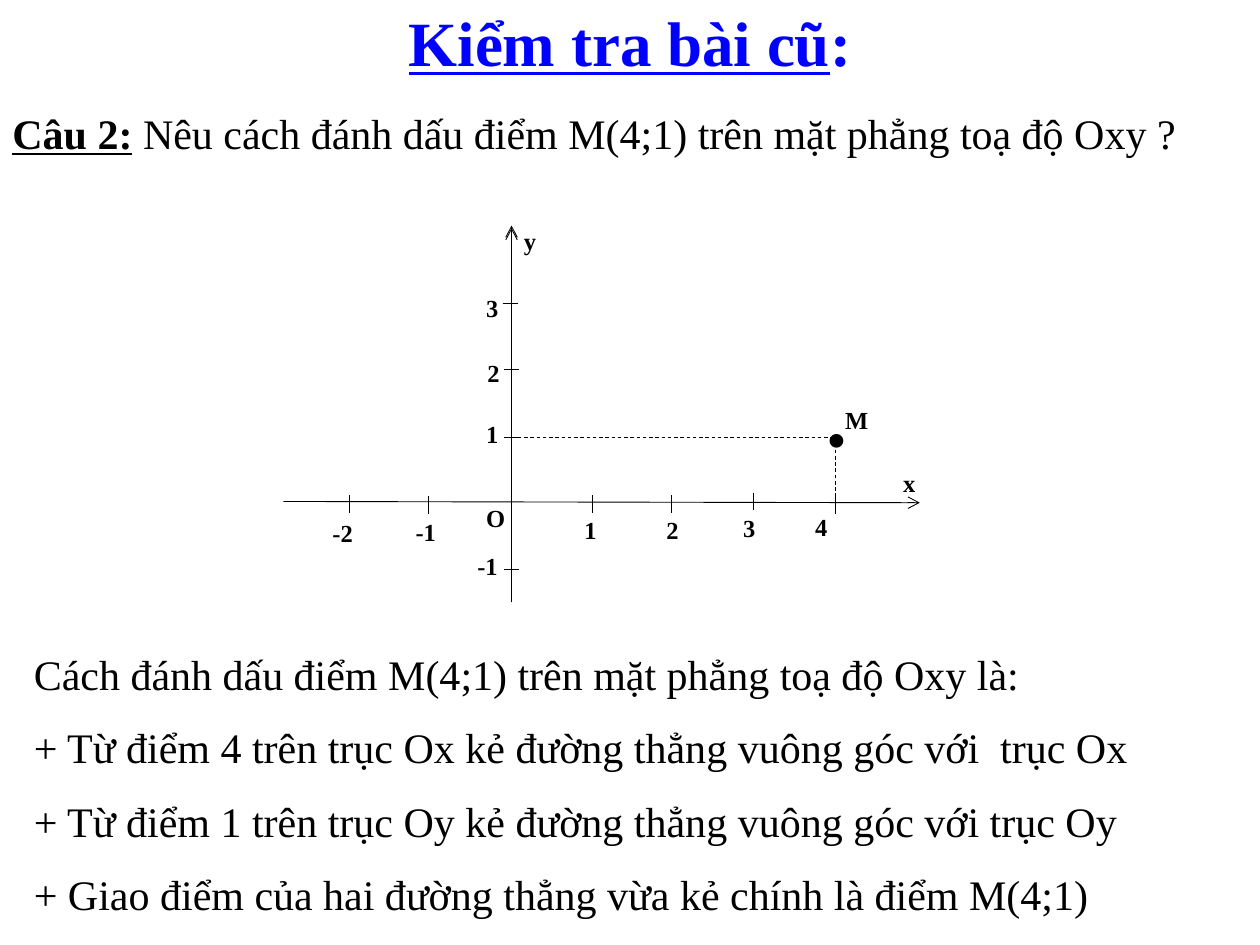
from dataclasses import dataclass

from lxml import etree
from pptx import Presentation
from pptx import util as u
from pptx.dml.color import RGBColor
from pptx.enum import dml, shapes, text
from pptx.oxml import ns

BLACK = RGBColor(0, 0, 0)
BLUE = RGBColor(0, 0, 255)
FONT = "Times New Roman"
ORIGIN_X, ORIGIN_Y = 4.06, 3.99
POINT_X, POINT_Y = 6.63, 3.47
TICK_WIDTH, TICK_HEIGHT = 0.12, 0.14
LABEL_SIZE, LABEL_HEIGHT = 0.51, 0.4

BODY = {"size": u.Pt(24), "bold": False, "underline": False}
HEADING = {"size": u.Pt(24), "bold": True, "underline": True}
TITLE = {"size": u.Pt(36), "bold": True, "underline": True}
TITLE_END = {"size": u.Pt(36), "bold": True, "underline": False}
LABEL = {"size": u.Pt(14), "bold": True}
DOT = {"size": u.Pt(66)}
LABEL_SPACING = {"line_spacing": 1.07, "space_after": u.Pt(8)}


@dataclass
class Run:
    words: str
    style: dict
    color: RGBColor = BLACK
    shadow: bool = False


@dataclass
class TextBlock:
    left: float
    top: float
    width: float
    height: float
    paragraphs: list[list[Run]]
    layout: dict
    wrap: bool = True
    grow: bool = True


@dataclass
class Line:
    x1: float
    y1: float
    x2: float
    y2: float
    arrow: bool = False
    dashed: bool = False


def set_format(target, values: dict) -> None:
    for name, value in values.items():
        setattr(target, name, value)


def add_text_shadow(font_element) -> None:
    effects = etree.Element(ns.qn("a:effectLst"))
    shadow = etree.SubElement(effects, ns.qn("a:outerShdw"),
                              dist="35921", dir="2700000", algn="ctr")
    etree.SubElement(shadow, ns.qn("a:srgbClr"), val="808080")
    font_element.find(ns.qn("a:solidFill")).addnext(effects)


def draw_text(slide, block: TextBlock) -> None:
    shape = slide.shapes.add_textbox(u.Inches(block.left), u.Inches(block.top),
                                     u.Inches(block.width), u.Inches(block.height))
    frame = shape.text_frame
    size_rule = text.MSO_AUTO_SIZE.SHAPE_TO_FIT_TEXT if block.grow else text.MSO_AUTO_SIZE.NONE
    set_format(frame, {"word_wrap": block.wrap, "auto_size": size_rule})
    for index, runs in enumerate(block.paragraphs):
        paragraph = frame.add_paragraph() if index else frame.paragraphs[0]
        set_format(paragraph, block.layout)
        if index:
            paragraph.space_before = u.Pt(13)
        for item in runs:
            run = paragraph.add_run()
            run.text = item.words
            set_format(run.font, {"name": FONT, **item.style})
            run.font.color.rgb = item.color
            if item.shadow:
                add_text_shadow(run.font._element)


def draw_label(slide, words: str, left: float, top: float) -> None:
    draw_text(slide, TextBlock(left, top, LABEL_SIZE, LABEL_HEIGHT,
                               [[Run(words, LABEL)]], LABEL_SPACING, grow=False))


def draw_line(slide, line: Line) -> None:
    connector = slide.shapes.add_connector(
        shapes.MSO_CONNECTOR.STRAIGHT, u.Inches(line.x1), u.Inches(line.y1),
        u.Inches(line.x2), u.Inches(line.y2))
    connector.line.width = u.Pt(0.5)
    connector.line.color.rgb = BLACK
    if line.dashed:
        connector.line.dash_style = dml.MSO_LINE.DASH
    properties = connector._element.spPr
    if line.arrow:
        etree.SubElement(properties.find(ns.qn("a:ln")), ns.qn("a:tailEnd"), type="arrow")
    etree.SubElement(properties, ns.qn("a:effectLst"))


TEXTS = [
    TextBlock(0, 0.8, 9.67, 0.51, [[
        Run("Câu 2:", HEADING),
        Run(" Nêu cách đánh dấu điểm M(4;1) trên mặt phẳng toạ độ Oxy ?", BODY)]], {}),
    TextBlock(0.17, 5.1, 9.75, 2.32, [[Run(words, BODY)] for words in (
        "Cách đánh dấu điểm M(4;1) trên mặt phẳng toạ độ Oxy là:",
        "+ Từ điểm 4 trên trục Ox kẻ đường thẳng vuông góc với  trục Ox",
        "+ Từ điểm 1 trên trục Oy kẻ đường thẳng vuông góc với trục Oy",
        "+ Giao điểm của hai đường thẳng vừa kẻ chính là điểm M(4;1)")], {}),
    TextBlock(2.25, -0.02, 5.5, 0.7, [[
        Run("Kiểm tra bài cũ", TITLE, BLUE, True),
        Run(":", TITLE_END, BLUE, True)]], {"alignment": text.PP_ALIGN.CENTER}),
    TextBlock(6.43, 2.58, 0.43, 1.21, [[Run(".", DOT)]], {}, wrap=False),
]

AXES = [Line(ORIGIN_X, 4.78, ORIGIN_X, top, arrow=True) for top in (1.79, 1.81)]
AXES.append(Line(2.25, 3.98, 7.3, ORIGIN_Y, arrow=True))
X_TICKS = [Line(x, top, x, top + TICK_HEIGHT) for x, top in (
    (2.77, 3.93), (3.4, 3.94), (4.7, 3.93), (5.33, 3.93), (5.98, 3.91), (POINT_X, 3.94))]
Y_TICKS = [Line(left, y, left + TICK_WIDTH, y) for left, y in (
    (3.99, 2.41), (4, 2.93), (4, POINT_Y), (4, 4.52))]
GUIDES = [Line(ORIGIN_X, POINT_Y, POINT_X, POINT_Y, dashed=True),
          Line(POINT_X, POINT_Y, POINT_X, 4.08, dashed=True)]

LABELS = [
    ("-2", 2.54, 4.05), ("-1", 3.2, 4.04), ("1", 4.54, 4.02),
    ("2", 5.19, 4.02), ("3", 5.8, 4.01), ("4", 6.37, 4),
    ("3", 3.76, 2.26), ("2", 3.77, 2.78), ("1", 3.76, 3.26), ("-1", 3.69, 4.31),
    ("O", 3.76, 3.93), ("M", 6.61, 3.15), ("x", 7.07, 3.65), ("y", 4.06, 1.73),
]


def main() -> None:
    presentation = Presentation()
    set_format(presentation, {"slide_width": u.Inches(10), "slide_height": u.Inches(7.5)})
    slide = presentation.slides.add_slide(presentation.slide_layouts[6])
    for line in AXES + X_TICKS + Y_TICKS + GUIDES:
        draw_line(slide, line)
    for label in LABELS:
        draw_label(slide, *label)
    for block in TEXTS:
        draw_text(slide, block)
    presentation.save("out.pptx")


if __name__ == "__main__":
    main()
